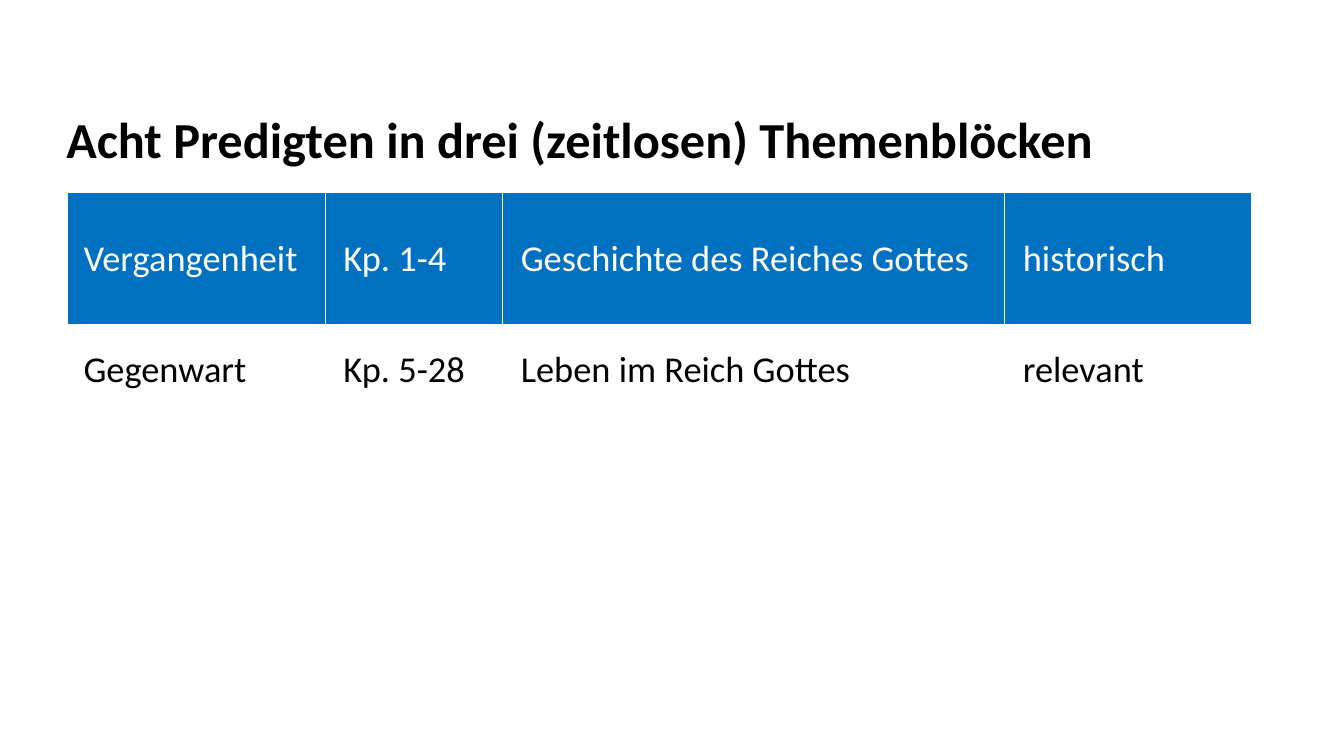
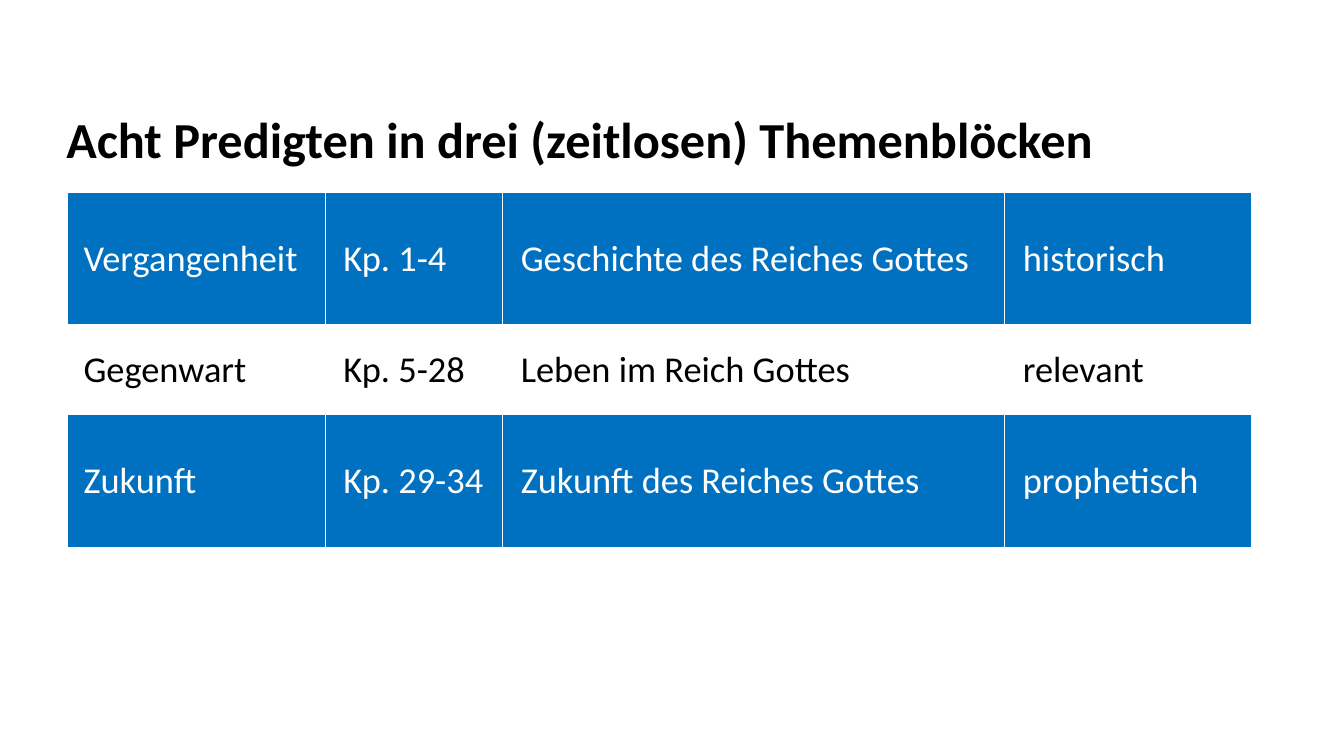
from dataclasses import dataclass

from lxml.etree import SubElement
from pptx import Presentation
from pptx.dml.color import RGBColor
from pptx.enum.text import MSO_ANCHOR as Anchor, MSO_AUTO_SIZE as AutoSize
from pptx.oxml.ns import qn
from pptx.slide import Slide
from pptx.table import _Cell as Cell
from pptx.text.text import TextFrame
from pptx.util import Pt

# Shared look
BLUE = RGBColor(0x00, 0x70, 0xC0)
WHITE = RGBColor(0xFF, 0xFF, 0xFF)
BLACK = RGBColor(0x00, 0x00, 0x00)
FONT = "Calibri"
HEADING = "Acht Predigten in drei (zeitlosen) Themenblöcken"

# Table geometry in points
TABLE_LEFT, TABLE_TOP = 48.2, 137.5
COLUMN_WIDTHS = (184.3, 126.7, 358.6, 176.4)
CELL_INSET = 11.5
INDENT = 1.4


@dataclass(frozen=True)
class Era:
    """One table row: a period with its chapters, topic and character."""
    texts: tuple[str, str, str, str]
    height: float = 95
    fill: RGBColor = BLUE
    color: RGBColor = WHITE
    bottom_line: float = 1


PAST = Era(("Vergangenheit", "Kp. 1-4", "Geschichte des Reiches Gottes", "historisch"),
           bottom_line=3)
PRESENT = Era(("Gegenwart", "Kp. 5-28", "Leben im Reich Gottes", "relevant"),
              height=63.4, fill=WHITE, color=BLACK)
FUTURE = Era(("Zukunft", "Kp. 29-34", "Zukunft des Reiches Gottes", "prophetisch"))


def write(frame: TextFrame, text: str, *, size: float, color: RGBColor,
          bold: bool = False, indent: float = 0) -> None:
    paragraph = frame.paragraphs[0]
    if indent:
        paragraph._p.get_or_add_pPr().set("marL", str(Pt(indent)))
    run = paragraph.add_run()
    run.text = text
    run.font.name = FONT
    run.font.size = Pt(size)
    run.font.bold = bold
    run.font.color.rgb = color


def add_borders(cell: Cell, bottom: float) -> None:
    """Draw white lines around a cell; call before setting its fill."""
    properties = cell._tc.get_or_add_tcPr()
    for side, width in (("L", 1), ("R", 1), ("T", 1), ("B", bottom)):
        line = SubElement(properties, qn(f"a:ln{side}"), w=str(Pt(width)))
        solid = SubElement(line, qn("a:solidFill"))
        SubElement(solid, qn("a:srgbClr"), val=str(WHITE))


def add_heading(slide: Slide) -> None:
    heading = slide.shapes.add_textbox(Pt(40.3), Pt(73.4), Pt(756.7), Pt(51))
    frame = heading.text_frame
    frame.word_wrap = False
    frame.auto_size = AutoSize.SHAPE_TO_FIT_TEXT
    write(frame, HEADING, size=36, color=BLACK, bold=True)


def fill_cell(cell: Cell, text: str, era: Era, indent: float) -> None:
    add_borders(cell, era.bottom_line)
    cell.fill.solid()
    cell.fill.fore_color.rgb = era.fill
    cell.vertical_anchor = Anchor.MIDDLE
    cell.margin_left = cell.margin_right = Pt(CELL_INSET)
    cell.margin_top = cell.margin_bottom = Pt(0)
    write(cell.text_frame, text, size=26, color=era.color, indent=indent)


def add_era_table(slide: Slide, eras: tuple[Era, ...]) -> None:
    table = slide.shapes.add_table(
        len(eras), len(COLUMN_WIDTHS), Pt(TABLE_LEFT), Pt(TABLE_TOP),
        Pt(sum(COLUMN_WIDTHS)), Pt(sum(era.height for era in eras))).table
    for column, width in zip(table.columns, COLUMN_WIDTHS):
        column.width = Pt(width)
    for row, era in zip(table.rows, eras):
        row.height = Pt(era.height)
        for index, (cell, text) in enumerate(zip(row.cells, era.texts)):
            fill_cell(cell, text, era, INDENT if index else 0)


def main() -> None:
    deck = Presentation()
    deck.slide_width, deck.slide_height = Pt(960), Pt(540)
    blank = deck.slide_layouts[6]

    # The table grows by one period from slide to slide
    for eras in ((PAST, PRESENT), (PAST, PRESENT, FUTURE)):
        slide = deck.slides.add_slide(blank)
        add_heading(slide)
        add_era_table(slide, eras)

    deck.save("out.pptx")


if __name__ == "__main__":
    main()
